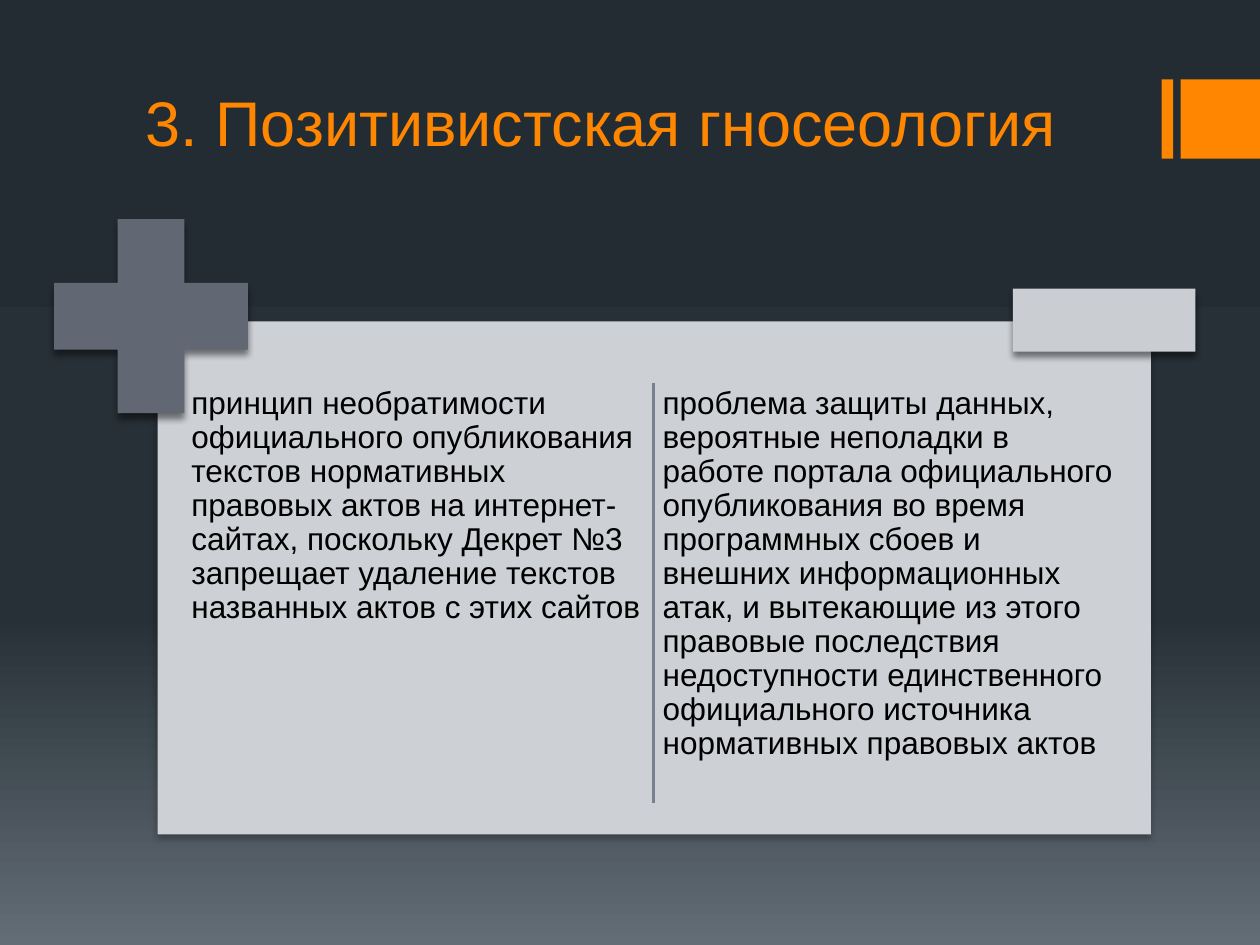
"""Build the slide on the strengths and weaknesses of positivist gnoseology."""
import copy

import lxml.etree
import pptx
import pptx.dml.color
import pptx.enum.shapes
import pptx.enum.text
import pptx.oxml
import pptx.oxml.ns
import pptx.util

Cm = pptx.util.Cm
Pt = pptx.util.Pt
qn = pptx.oxml.ns.qn
Kind = pptx.enum.shapes.MSO_SHAPE
Anchor = pptx.enum.text.MSO_ANCHOR

FONT = "Arial"
ACCENT = "FF8600"
TITLE = "3. Позитивистская гносеология"
ARGUMENTS = [
    "принцип необратимости официального опубликования текстов нормативных "
    "правовых актов на интернет-сайтах, поскольку Декрет №3 запрещает "
    "удаление текстов названных актов с этих сайтов",
    "проблема защиты данных, вероятные неполадки в работе портала "
    "официального опубликования во время программных сбоев и внешних "
    "информационных атак, и вытекающие из этого правовые последствия "
    "недоступности единственного официального источника нормативных "
    "правовых актов",
]
BACKGROUND = [(0, "242C33"), (65, "273037"), (100, "636D76")]
MARKERS = [(23.42, 0.23), (23.8, 1.6)]
PANEL = (3.18, 6.48, 20.02, 10.34)
PLUS = (1.09, 4.42, 3.91, 3.91)
MINUS = (20.42, 5.82, 3.68, 1.27)
COLUMN_LEFT, COLUMN_STEP = 3.76, 9.5
COLUMN_WIDTH, COLUMN_HEIGHT = 9.3, 8.84


def rgb(value):
    """Turn a hex string into a colour."""
    return pptx.dml.color.RGBColor.from_string(value)


def paint_background(slide, stops):
    """Fill the slide from top to bottom with the given colour stops."""
    fill = slide.background.fill
    fill.gradient()
    fill.gradient_angle = 270
    stop_list = next(slide.element.iter(qn("a:gsLst")))
    for old in list(stop_list):
        stop_list.remove(old)
    for position, color in stops:
        stop = lxml.etree.SubElement(stop_list, qn("a:gs"), pos=str(position * 1000))
        lxml.etree.SubElement(stop, qn("a:srgbClr"), val=color)


def cast_shadow(shape, opacity, blur):
    """Give the shape a soft black shadow straight below it."""
    effects = shape.element.spPr.find(qn("a:effectLst"))
    shadow = lxml.etree.SubElement(
        effects, qn("a:outerShdw"), blurRad=str(Pt(blur)), dist=str(Pt(3)),
        dir="5400000", rotWithShape="0")
    color = lxml.etree.SubElement(shadow, qn("a:srgbClr"), val="000000")
    lxml.etree.SubElement(color, qn("a:alpha"), val=str(opacity * 1000))


def add_block(slide, kind, bounds, color):
    """Add a flat shape without an outline."""
    shape = slide.shapes.add_shape(kind, *map(Cm, bounds))
    shape.shadow.inherit = False
    shape.fill.solid()
    shape.fill.fore_color.rgb = rgb(color)
    shape.line.fill.background()
    return shape


def add_text(slide, bounds, text, size, color, anchor):
    """Add a wrapped text box with one paragraph."""
    box = slide.shapes.add_textbox(*map(Cm, bounds))
    frame = box.text_frame
    frame.word_wrap = True
    frame.vertical_anchor = anchor
    para = frame.paragraphs[0]
    para.text = text
    para.font.name = FONT
    para.font.size = Pt(size)
    para.font.color.rgb = rgb(color)
    return frame


def add_divider(slide, x, top, bottom):
    """Add the vertical line between the two columns."""
    line = slide.shapes.add_connector(
        pptx.enum.shapes.MSO_CONNECTOR.STRAIGHT, Cm(x), Cm(top), Cm(x), Cm(bottom))
    line.line.color.rgb = rgb("77808D")
    line.line.width = Pt(1.5)
    lxml.etree.SubElement(line.element.spPr, qn("a:effectLst"))


def main():
    """Compose and save the slide."""
    deck = pptx.Presentation()
    deck.slide_width, deck.slide_height = Cm(25.4), Cm(19.05)
    page = deck.slides.add_slide(deck.slide_layouts[6])
    paint_background(page, BACKGROUND)

    for left, width in MARKERS:
        add_block(page, Kind.RECTANGLE, (left, 1.6, width, 1.6), ACCENT)
    add_text(page, (2.69, 0.13, 20.32, 3.2), TITLE, 36, ACCENT, Anchor.BOTTOM)

    cast_shadow(add_block(page, Kind.RECTANGLE, PANEL, "CDD0D5"), 28, 4)
    for index, text in enumerate(ARGUMENTS):
        bounds = (COLUMN_LEFT + index * COLUMN_STEP, 7.7, COLUMN_WIDTH, COLUMN_HEIGHT)
        frame = add_text(page, bounds, text, 18, "000000", Anchor.TOP)
        frame.margin_left = frame.margin_right = Cm(0.1)
        frame.margin_top = frame.margin_bottom = Cm(0.1)
        frame.paragraphs[0].line_spacing = 0.9

    plus = add_block(page, Kind.CROSS, PLUS, "616873")
    plus.adjustments[0] = 0.328
    minus = add_block(page, Kind.RECTANGLE, MINUS, "CACDD2")
    for sign in (plus, minus):
        cast_shadow(sign, 48, 3.8)
    add_divider(page, 13.18, 7.72, 16.18)

    deck.save("out.pptx")


if __name__ == "__main__":
    main()
